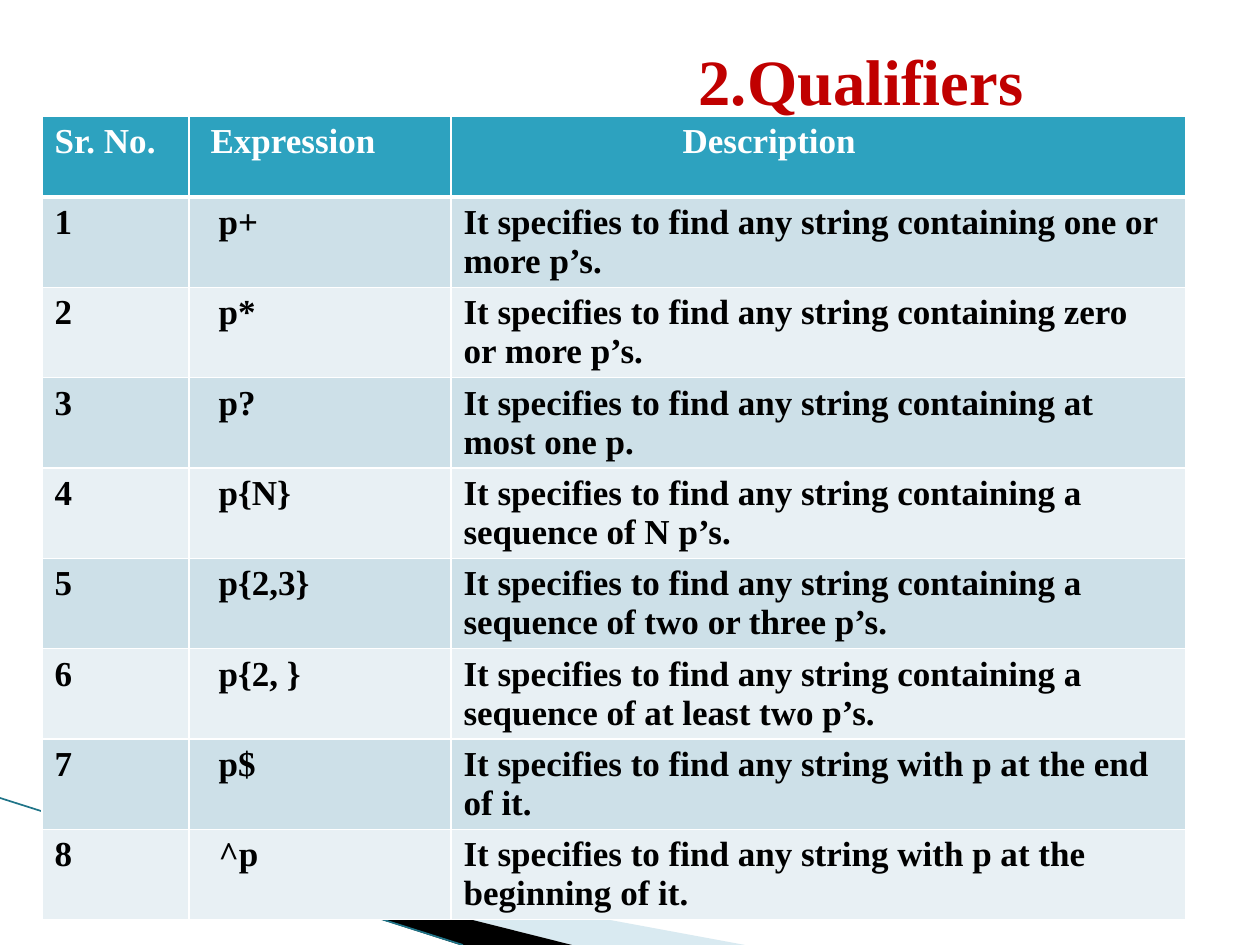
from lxml.etree import SubElement as Sub
from pptx import Presentation
from pptx.dml.color import RGBColor
from pptx.enum.shapes import MSO_CONNECTOR as Conn
from pptx.enum.text import MSO_ANCHOR as Anchor, MSO_AUTO_SIZE as Fit, PP_ALIGN as Align
from pptx.oxml.ns import qn
from pptx.util import Pt

PX = 914400 / 126
FONT = "Times New Roman"
WHITE = RGBColor(255, 255, 255)
BLACK = RGBColor(0, 0, 0)
RED = RGBColor(192, 0, 0)
TEAL = RGBColor(0x2D, 0xA2, 0xBF)
EDGE = RGBColor(0x1F, 0x74, 0x88)
SKY = RGBColor(0xA0, 0xCB, 0xDC)
BANDS = [RGBColor(0xE8, 0xF0, 0xF4), RGBColor(0xCD, 0xE0, 0xE8)]

TITLE = "2.Qualifiers"
HEAD = ("Sr. No.", "Expression", "Description")
FIND = "It specifies to find any string "
RULES = [
    ("p+", "containing one or more p’s."),
    ("p*", "containing zero or more p’s."),
    ("p?", "containing at most one p."),
    ("p{N}", "containing a sequence of N p’s."),
    ("p{2,3}", "containing a sequence of two or three p’s."),
    ("p{2, }", "containing a sequence of at least two p’s."),
    ("p$", "with p at the end of it."),
    ("^p", "with p at the beginning of it."),
]
COLS = (147, 262, 735)
HEAD_IN = (0, 9, 219)
BODY_IN = (0, 17, 0)
HEAD_H, ROW_H = 81, 90
SWOOSH = [
    (SKY, 40, [(69, 820), (745, 945), (572, 945), (69, 819)]),
    (BLACK, 100, [(67, 818), (572, 945), (460, 945), (68, 819)]),
]


def px(n):
    return round(n * PX)


def style(para, size, color, left):
    para.alignment = Align.LEFT
    para._p.get_or_add_pPr().set("marL", str(px(left)))
    para._p.get_or_add_pPr().set("indent", "0")
    for run in para.runs:
        font = run.font
        font.name, font.size, font.bold = FONT, Pt(size), True
        font.color.rgb = color


def border(cell, low):
    props = cell._tc.get_or_add_tcPr()
    for spot, (side, width) in enumerate(zip("LRTB", (1, 1, 1, low))):
        line = Sub(props, qn("a:ln" + side), w=str(Pt(width)))
        fill = Sub(line, qn("a:solidFill"))
        Sub(fill, qn("a:srgbClr"), val=str(WHITE))
        props.remove(line)
        props.insert(spot, line)


def draw_swoosh(shapes):
    for color, alpha, points in SWOOSH:
        pen = shapes.build_freeform(*points[0], scale=PX)
        pen.add_line_segments(points[1:], close=True)
        wing = pen.convert_to_shape()
        wing.shadow.inherit = False
        wing.line.fill.background()
        wing.fill.solid()
        wing.fill.fore_color.rgb = color
        if alpha < 100:
            tint = wing._element.spPr.find(".//" + qn("a:srgbClr"))
            Sub(tint, qn("a:alpha"), val=str(alpha * 1000))
    edge = shapes.add_connector(Conn.STRAIGHT, 0, px(798), px(463), px(945))
    edge.line.color.rgb = EDGE
    edge.line.width = Pt(0.95)
    Sub(edge._element.spPr, qn("a:effectLst"))


def draw_table(shapes):
    rows = [HEAD] + [(str(n), expr, FIND + end)
                     for n, (expr, end) in enumerate(RULES, 1)]
    high = HEAD_H + ROW_H * len(RULES)
    grid = shapes.add_table(len(rows), len(COLS), px(42), px(116),
                            px(sum(COLS)), px(high)).table
    for col, wide in zip(grid.columns, COLS):
        col.width = px(wide)
    for r, row in enumerate(rows):
        top = r == 0
        grid.rows[r].height = px(HEAD_H if top else ROW_H)
        for c, text in enumerate(row):
            cell = grid.cell(r, c)
            cell.text_frame.text = text
            cell.margin_right = px(21 if c == 2 else 12)
            cell.fill.solid()
            cell.fill.fore_color.rgb = TEAL if top else BANDS[r % 2]
            border(cell, 3 if top else 1)
            style(cell.text_frame.paragraphs[0], 20, WHITE if top else BLACK,
                  (HEAD_IN if top else BODY_IN)[c])


def set_title(shapes):
    title = shapes.title
    title.left, title.top = px(63), px(38)
    title.width, title.height = px(1134), px(66)
    frame = title.text_frame
    frame.text = TITLE
    frame.auto_size = Fit.NONE
    frame.vertical_anchor = Anchor.TOP
    frame.margin_top, frame.margin_bottom = px(3), 0
    style(frame.paragraphs[0], 36.9, RED, 623)
    shapes._spTree.append(title._element)


def main():
    deck = Presentation()
    deck.slide_width, deck.slide_height = px(1260), px(945)
    shapes = deck.slides.add_slide(deck.slide_layouts[5]).shapes
    draw_swoosh(shapes)
    draw_table(shapes)
    set_title(shapes)
    deck.save("out.pptx")


if __name__ == "__main__":
    main()
